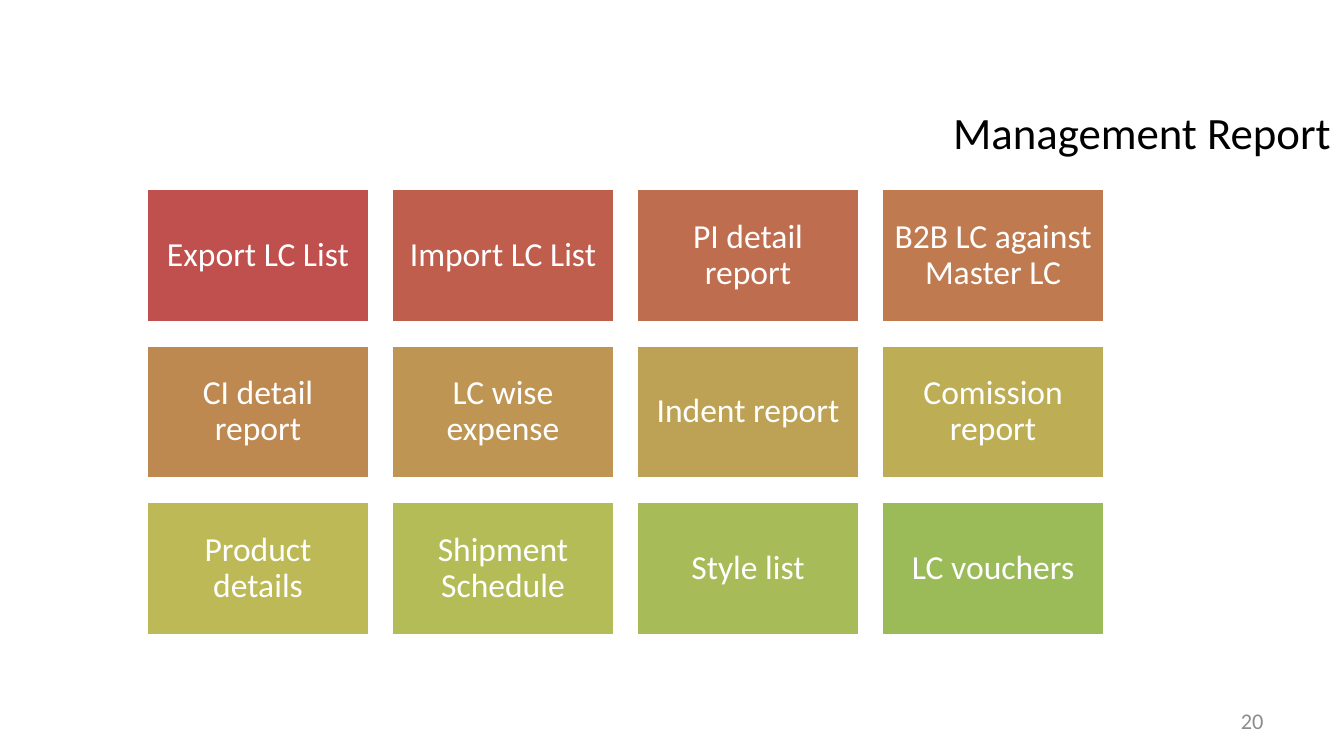
"""Build the Management Report slide: a grid of twelve report tiles."""
from pptx import Presentation
from pptx.dml.color import RGBColor
from pptx.enum import shapes, text
from pptx.util import Inches, Pt

WHITE = RGBColor(0xFF, 0xFF, 0xFF)
BLACK = RGBColor(0, 0, 0)
GREY = RGBColor(0x8C, 0x8C, 0x8C)

REPORTS = [
    ("Export LC List", RGBColor(0xC0, 0x50, 0x4D)),
    ("Import LC List", RGBColor(0xC0, 0x5E, 0x4E)),
    ("PI detail report", RGBColor(0xBF, 0x6D, 0x4F)),
    ("B2B LC against Master LC", RGBColor(0xBF, 0x7A, 0x50)),
    ("CI detail report", RGBColor(0xBE, 0x88, 0x51)),
    ("LC wise expense", RGBColor(0xBE, 0x95, 0x53)),
    ("Indent report", RGBColor(0xBD, 0xA1, 0x54)),
    ("Comission report", RGBColor(0xBD, 0xAE, 0x55)),
    ("Product details", RGBColor(0xBC, 0xB9, 0x56)),
    ("Shipment Schedule", RGBColor(0xB3, 0xBC, 0x57)),
    ("Style list", RGBColor(0xA7, 0xBB, 0x58)),
    ("LC vouchers", RGBColor(0x9B, 0xBB, 0x59)),
]
LABELS = [
    ("Management Report", (6.83, 0.73, 3.17, 0.5), 24, BLACK),
    ("20", (7.17, 5.21, 2.33, 0.3), 12, GREY),
]

COLUMNS = 4
ROWS = len(REPORTS) // COLUMNS
FIRST_LEFT, LAST_LEFT = 1.09, 6.56
FIRST_TOP, LAST_TOP = 1.4, 3.73
TILE_WIDTH, TILE_HEIGHT = 1.66, 1
COLUMN_STEP = (LAST_LEFT - FIRST_LEFT) / (COLUMNS - 1)
ROW_STEP = (LAST_TOP - FIRST_TOP) / (ROWS - 1)
SIDE_INSET, END_INSET = 0.08, 0.07


def write(shape, wording, size, color, alignment):
    frame = shape.text_frame
    frame.text = wording
    frame.word_wrap = True
    frame.vertical_anchor = text.MSO_ANCHOR.MIDDLE
    paragraph = frame.paragraphs[0]
    paragraph.alignment = alignment
    font = paragraph.runs[0].font
    font.name, font.size, font.color.rgb = "Calibri", Pt(size), color
    return frame


def add_label(slide, wording, box, size, color):
    label = slide.shapes.add_textbox(*map(Inches, box))
    write(label, wording, size, color, text.PP_ALIGN.RIGHT)


def add_tile(slide, index, wording, fill):
    row, column = divmod(index, COLUMNS)
    tile = slide.shapes.add_shape(
        shapes.MSO_SHAPE.RECTANGLE,
        Inches(FIRST_LEFT + column * COLUMN_STEP),
        Inches(FIRST_TOP + row * ROW_STEP),
        Inches(TILE_WIDTH), Inches(TILE_HEIGHT))
    tile.shadow.inherit = False
    tile.fill.solid()
    tile.fill.fore_color.rgb = fill
    tile.line.color.rgb = WHITE
    tile.line.width = Pt(2)
    frame = write(tile, wording, 18, WHITE, text.PP_ALIGN.CENTER)
    frame.margin_left = frame.margin_right = Inches(SIDE_INSET)
    frame.margin_top = frame.margin_bottom = Inches(END_INSET)
    frame.paragraphs[0].line_spacing = 0.9


def main():
    presentation = Presentation()
    presentation.slide_width = Inches(10)
    presentation.slide_height = Inches(10 * 9 / 16)
    slide = presentation.slides.add_slide(presentation.slide_layouts[6])
    for label in LABELS:
        add_label(slide, *label)
    for index, (wording, fill) in enumerate(REPORTS):
        add_tile(slide, index, wording, fill)
    presentation.save("out.pptx")


if __name__ == "__main__":
    main()
